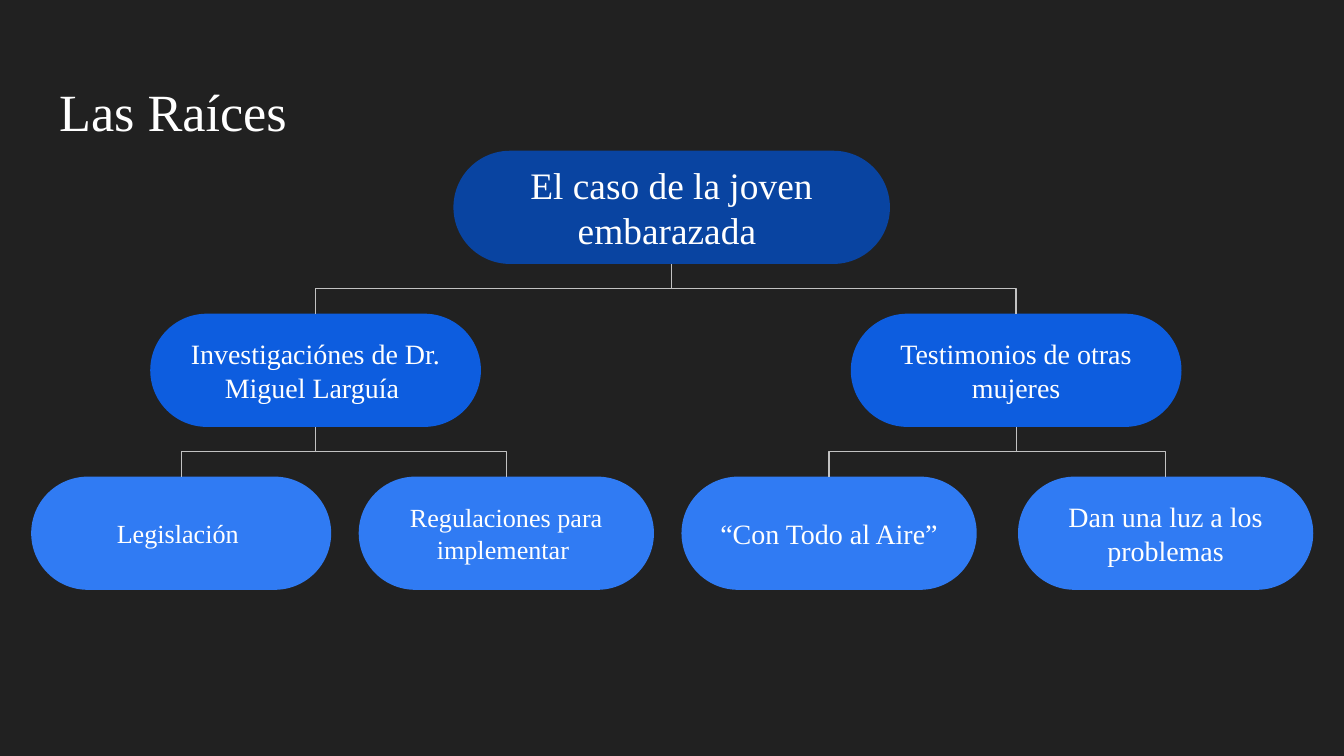
from lxml.etree import SubElement
from pptx import Presentation
from pptx.dml.color import RGBColor
from pptx.enum.shapes import MSO_CONNECTOR, MSO_SHAPE
from pptx.enum.text import MSO_ANCHOR, PP_ALIGN
from pptx.oxml.ns import qn
from pptx.util import Cm, Pt

FONT = "Times New Roman"
HEX = {"back": "212121", "text": "FFFFFF", "line": "C2C2C2"}
FILLS = ["0944A1", "0D5DDF", "307BF3"]  # one per level
HIGH, PITCH = 2.14, 3.08  # pill height and level spacing in cm

# Each node: text, left and width in cm, font size, children
TREE = ("El caso de la joven embarazada ", 7.98, 8.25, 20, [
    ("Investigaciónes de Dr. Miguel Larguía ", 2.25, 6.25, 15, [
        ("Legislación ", 0, 5.67, 14, []),
        ("Regulaciones para implementar ", 6.19, 5.58, 14, []),
    ]),
    ("Testimonios de otras mujeres", 15.49, 6.25, 15, [
        ("“Con Todo al Aire”", 12.29, 5.58, 15, []),
        ("Dan una luz a los problemas", 18.65, 5.58, 15, []),
    ]),
])


def color(key):
    return RGBColor.from_string(HEX.get(key, key))


def write(shape, text, size, align, anchor):
    frame = shape.text_frame
    frame.word_wrap = True
    frame.vertical_anchor = anchor
    frame.margin_left = frame.margin_right = Cm(0.25)
    frame.margin_top = frame.margin_bottom = Cm(0.25)
    para = frame.paragraphs[0]
    para.text = text
    para.alignment = align
    para.font.name = FONT
    para.font.size = Pt(size)
    para.font.color.rgb = color("text")


def add_title(slide, left, top, width, height):
    box = slide.shapes.add_textbox(Cm(left), Cm(top), Cm(width), Cm(height))
    write(box, "Las Raíces", 28, PP_ALIGN.LEFT, MSO_ANCHOR.TOP)


def add_pill(slide, left, top, width, text, size, fill):
    pill = slide.shapes.add_shape(MSO_SHAPE.ROUNDED_RECTANGLE,
                                  Cm(left), Cm(top), Cm(width), Cm(HIGH))
    pill.adjustments[0] = 0.5
    pill.shadow.inherit = False
    pill.fill.solid()
    pill.fill.fore_color.rgb = color(fill)
    pill.line.fill.background()
    write(pill, text, size, PP_ALIGN.CENTER, MSO_ANCHOR.MIDDLE)
    return pill


def add_link(slide, upper, lower):
    x1, y1 = upper.left + upper.width // 2, upper.top + upper.height
    x2, y2 = lower.left + lower.width // 2, lower.top
    link = slide.shapes.add_connector(MSO_CONNECTOR.ELBOW, x1, y1, x2, y2)
    link.begin_connect(upper, 2)
    link.end_connect(lower, 0)
    link.line.color.rgb = color("line")
    link.line.width = Pt(0.75)
    props = link._element.spPr
    SubElement(props, qn("a:effectLst"))
    # Turn the elbow so that it leaves downwards
    link.width, link.height = y2 - y1, abs(x2 - x1)
    link.left = (x1 + x2 - link.width) // 2
    link.top = (y1 + y2 - link.height) // 2
    right = x2 > x1
    frame = props.find(qn("a:xfrm"))
    frame.set("rot", str((270 if right else 90) * 60000))
    frame.set("flipH", "1" if right else "0")


def add_tree(slide, left, top, node, level=0):
    text, shift, width, size, kids = node
    pill = add_pill(slide, left + shift, top + level * PITCH, width,
                    text, size, FILLS[level])
    for kid in kids:
        add_link(slide, pill, add_tree(slide, left, top, kid, level + 1))
    return pill


def main():
    deck = Presentation()
    deck.slide_width, deck.slide_height = Cm(25.4), Cm(14.29)
    slide = deck.slides.add_slide(deck.slide_layouts[6])
    slide.background.fill.solid()
    slide.background.fill.fore_color.rgb = color("back")
    add_title(slide, 0.87, 1.24, 23.67, 1.6)
    add_tree(slide, 0.59, 2.85, TREE)
    deck.save("out.pptx")


if __name__ == "__main__":
    main()
